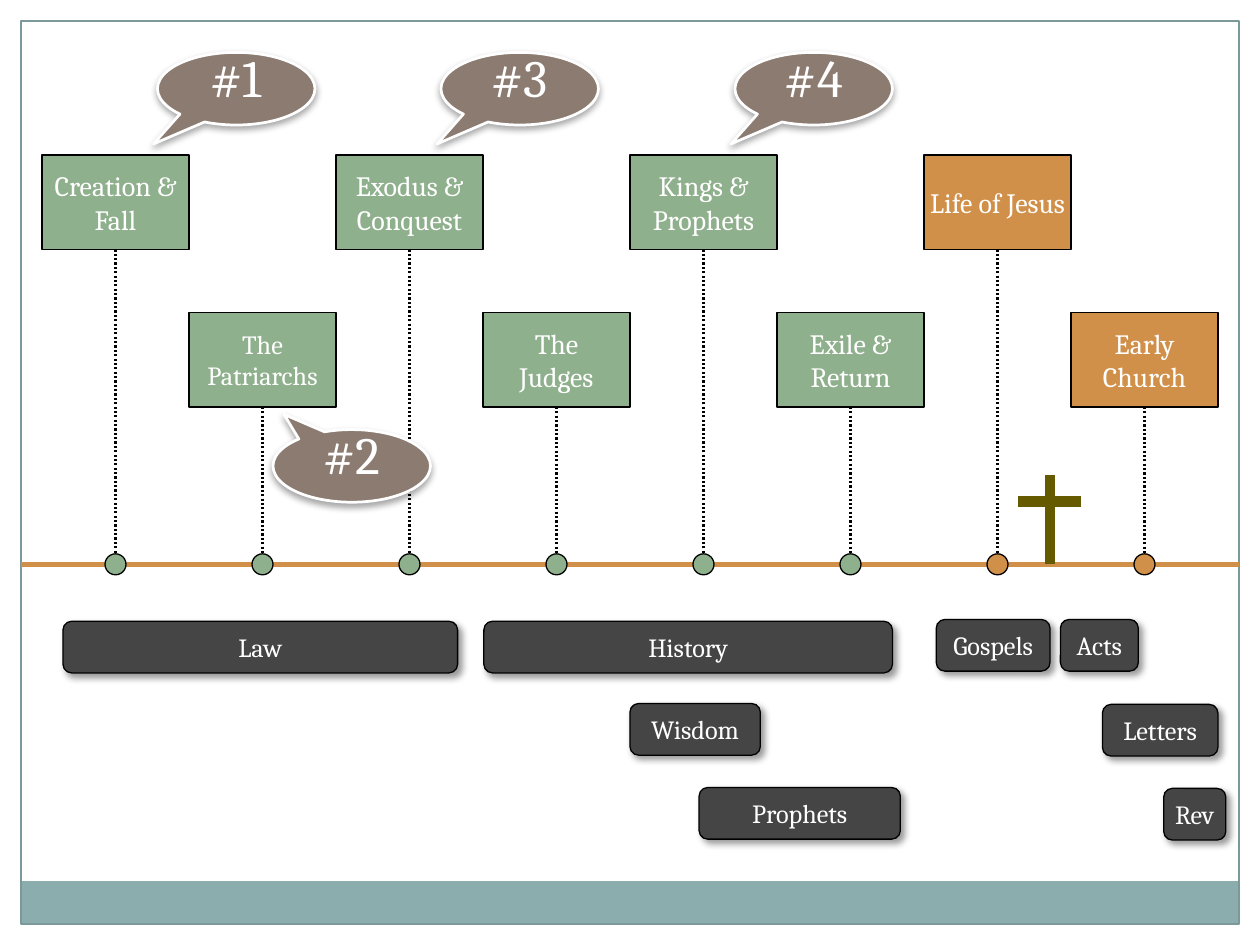
from dataclasses import dataclass

from lxml import etree
from pptx import Presentation
from pptx.dml.color import RGBColor
from pptx.enum import dml, shapes, text
from pptx.oxml import ns
from pptx.util import Pt


@dataclass(frozen=True)
class Theme:
    font: str = "Cambria"
    white: str = "FFFFFF"
    black: str = "000000"
    band: str = "8CADAE"
    frame: str = "7C999A"
    old_testament: str = "8FB08C"
    new_testament: str = "D19049"
    cross: str = "665A00"
    callout: str = "8C7B70"
    book: str = "454545"
    event_size: float = 16
    small_size: float = 15
    callout_size: float = 30


theme = Theme()
kinds = shapes.MSO_SHAPE


def add_box(kind, area, fill, line=None, width=0.75, label="", size=15, shadow=None):
    """Area is left, top, width, height; shadow is alpha %, blur, distance, angle."""
    box = page.shapes.add_shape(kind, *map(Pt, area))
    box.shadow.inherit = False
    if fill:
        box.fill.solid()
        box.fill.fore_color.rgb = RGBColor.from_string(fill)
    else:
        box.fill.background()
    if line:
        box.line.color.rgb = RGBColor.from_string(line)
        box.line.width = Pt(width)
    else:
        box.line.fill.background()
    if shadow:
        alpha, blur, distance, angle = shadow
        effects = box._element.spPr.find(ns.qn("a:effectLst"))
        outer = etree.SubElement(effects, ns.qn("a:outerShdw"), blurRad=str(Pt(blur)),
                                 dist=str(Pt(distance)), dir=str(angle * 60000),
                                 algn="ctr", rotWithShape="0")
        color = etree.SubElement(outer, ns.qn("a:srgbClr"), val=theme.black)
        etree.SubElement(color, ns.qn("a:alpha"), val=str(alpha * 1000))
    if label:
        frame = box.text_frame
        frame.text = label
        frame.word_wrap = True
        frame.vertical_anchor = text.MSO_ANCHOR.MIDDLE
        frame.margin_left = frame.margin_right = Pt(2)
        frame.margin_top = frame.margin_bottom = Pt(0)
        for para in frame.paragraphs:
            para.alignment = text.PP_ALIGN.CENTER
            for span in para.runs:
                span.font.name = theme.font
                span.font.size = Pt(size)
                span.font.color.rgb = RGBColor.from_string(theme.white)
    return box


def add_line(start, end, color, width):
    line = page.shapes.add_connector(shapes.MSO_CONNECTOR.STRAIGHT, *map(Pt, start + end))
    line.line.color.rgb = RGBColor.from_string(color)
    line.line.width = Pt(width)
    etree.SubElement(line._element.spPr, ns.qn("a:effectLst"))
    return line


deck = Presentation()
deck.slide_width, deck.slide_height = Pt(720), Pt(540)
page = deck.slides.add_slide(deck.slide_layouts[6])

# Page frame and timeline
add_box(kinds.RECTANGLE, (12, 503.5, 696, 24.5), theme.band)
add_box(kinds.RECTANGLE, (12, 12, 696, 516), None, theme.frame)
axis = 322.5
add_line((12, axis), (708, axis), theme.new_testament, 3)

# Events alternate between an upper and a lower row
events = ["Creation & Fall", "The Patriarchs", "Exodus & Conquest", "The\nJudges",
          "Kings & Prophets", "Exile & Return", "Life of Jesus", "Early Church"]
event_width, event_height, dot = 84, 54, 12
for index, event in enumerate(events):
    left = 24 + index * event_width
    top = 178.5 if index % 2 else 88.5
    center = left + event_width / 2
    color = theme.old_testament if index < 6 else theme.new_testament
    size = theme.small_size if event == "The Patriarchs" else theme.event_size
    add_box(kinds.RECTANGLE, (left, top, event_width, event_height), color,
            theme.black, 0.9, event, size)
    stem = add_line((center, top + event_height), (center, axis - dot / 2), theme.black, 1.25)
    stem.line.dash_style = dml.MSO_LINE.ROUND_DOT
    add_box(kinds.OVAL, (center - dot / 2, axis - dot / 2, dot, dot), color, theme.black)

# Cross
add_line((600, 271.5), (600, axis), theme.cross, 6)
add_line((582, 286.5), (618, 286.5), theme.cross, 6)

# Numbered callouts, each with its tail tip
tail_down, tail_up = (-0.525, 0.76), (-0.43, -0.71)
callouts = [("#1", 90, 30, tail_down), ("#2", 156, 245.5, tail_up),
            ("#3", 252, 30, tail_down), ("#4", 420, 30, tail_down)]
for label, left, top, tail in callouts:
    box = add_box(kinds.OVAL_CALLOUT, (left, top, 90, 41.5), theme.callout, theme.white, 1.57,
                  label, theme.callout_size, (35, 4, 2, 90))
    box.adjustments[0], box.adjustments[1] = tail
    box.text_frame.paragraphs[0].line_spacing = Pt(22)

# Groups of Bible books: left, top, width
books = [("Law", 36, 355, 225.5), ("History", 276.5, 355, 233.5), ("Wisdom", 360, 402, 74.5),
         ("Prophets", 399.5, 450, 115), ("Gospels", 535, 354, 65), ("Acts", 606, 354, 44.5),
         ("Letters", 630, 402.5, 66), ("Rev", 665, 450.5, 35.5)]
for label, left, top, width in books:
    box = add_box(kinds.ROUNDED_RECTANGLE, (left, top, width, 29.5), theme.book, theme.black,
                  0.75, label, theme.small_size, (40, 4, 3, 45))
    box.text_frame.word_wrap = False

deck.save("out.pptx")
